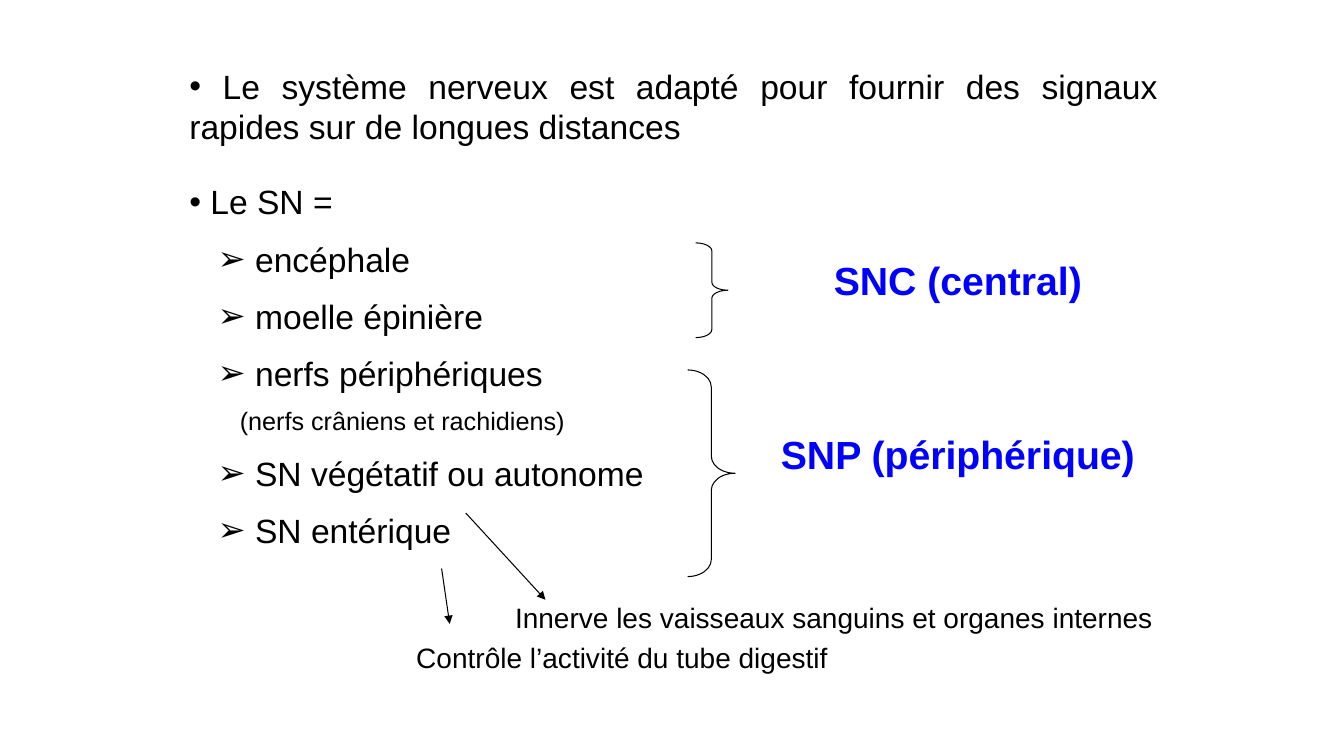
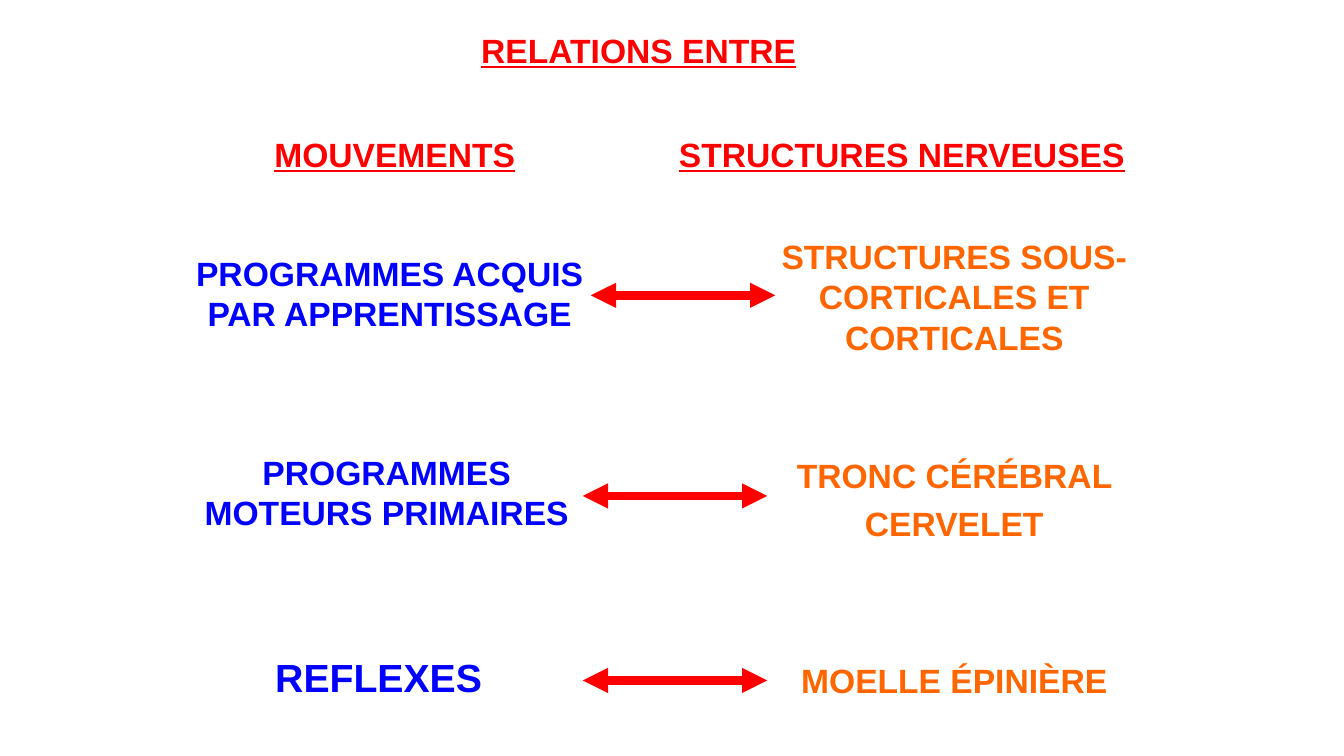
from lxml import etree
from pptx import Presentation
from pptx.dml.color import RGBColor
from pptx.enum.shapes import MSO_CONNECTOR as Connector, MSO_SHAPE as Shape
from pptx.enum.text import MSO_AUTO_SIZE as AutoSize, PP_ALIGN as Align
from pptx.oxml.ns import qn
from pptx.util import Inches, Pt

COLOURS = {
    "text": "000000",
    "accent": "0000FF",
    "heading": "FF0000",
    "structure": "FF6600",
}

# Text styles: font attributes, plus colour and alignment
STYLES = {
    "body": {"font": {"size": Pt(24)}, "colour": "text", "align": Align.JUSTIFY},
    "detail": {"font": {"size": Pt(18)}, "colour": "text", "align": Align.JUSTIFY},
    "note": {"font": {"size": Pt(20)}, "colour": "text", "align": Align.LEFT},
    "label": {"font": {"size": Pt(28), "bold": True}, "colour": "accent", "align": Align.CENTER},
    "movement": {"font": {"size": Pt(24), "bold": True}, "colour": "accent", "align": Align.CENTER},
    "structure": {"font": {"size": Pt(24), "bold": True}, "colour": "structure", "align": Align.CENTER},
    "heading": {"font": {"size": Pt(24), "bold": True, "underline": True},
                "colour": "heading", "align": Align.CENTER},
}


class Deck:
    font_name = "Arial"
    thin, thick = Pt(0.75), Pt(6)

    def __init__(self):
        self.presentation = Presentation()
        self.presentation.slide_width = Inches(13.33)
        self.presentation.slide_height = Inches(7.5)
        self.slide = None

    def new_slide(self):
        self.slide = self.presentation.slides.add_slide(self.presentation.slide_layouts[6])

    def text(self, box, *items, line_spacing=None):
        """Each item is (text, style) or (text, style, bullet, margin, indent)."""
        frame = self.slide.shapes.add_textbox(*map(Inches, box)).text_frame
        frame.word_wrap = True
        frame.auto_size = AutoSize.SHAPE_TO_FIT_TEXT
        for number, (words, style_name, *bullet) in enumerate(items):
            paragraph = frame.paragraphs[0] if number == 0 else frame.add_paragraph()
            style = STYLES[style_name]
            formats = {
                "alignment": style["align"],
                "line_spacing": line_spacing,
                "space_before": Pt(style["font"]["size"].pt / 2),
            }
            for name, value in formats.items():
                setattr(paragraph, name, value)
            run = paragraph.add_run()
            run.text = words
            for name, value in {"name": self.font_name, **style["font"]}.items():
                setattr(run.font, name, value)
            run.font.color.rgb = RGBColor.from_string(COLOURS[style["colour"]])
            if bullet:
                self.bullet(paragraph, *bullet)

    def bullet(self, paragraph, character, margin=0, indent=0):
        properties = paragraph._p.get_or_add_pPr()
        properties.set("marL", str(Inches(margin)))
        properties.set("indent", str(Inches(indent)))
        if character:
            etree.SubElement(properties, qn("a:buFont")).set("typeface", self.font_name)
            etree.SubElement(properties, qn("a:buChar")).set("char", character)

    def brace(self, box, curve):
        shape = self.slide.shapes.add_shape(Shape.RIGHT_BRACE, *map(Inches, box))
        shape.shadow.inherit = False
        shape.adjustments[0] = curve
        shape.fill.background()
        self.outline(shape.line, "text", self.thin)

    def arrow(self, start, end, colour, width, ends=("tailEnd",)):
        connector = self.slide.shapes.add_connector(
            Connector.STRAIGHT, *map(Inches, start + end))
        self.outline(connector.line, colour, width)
        line = connector.line._get_or_add_ln()
        for end_name in ends:
            etree.SubElement(line, qn(f"a:{end_name}")).set("type", "triangle")
        etree.SubElement(connector._element.spPr, qn("a:effectLst"))

    def outline(self, line, colour, width):
        line.color.rgb = RGBColor.from_string(COLOURS[colour])
        line.width = width


def build_nervous_system(deck):
    deck.new_slide()

    # Outline of the nervous system
    deck.text((1.78, 0.6, 9.8, 0.91),
              (" Le système nerveux est adapté pour fournir des signaux rapides "
               "sur de longues distances", "body", "•"))
    arrow_bullet = ("body", "➢", 0.5, -0.22)
    deck.text((1.78, 1.75, 9.8, 5.2),
              (" Le SN =", "body", "•"),
              (" encéphale", *arrow_bullet),
              (" moelle épinière", *arrow_bullet),
              (" nerfs périphériques", *arrow_bullet),
              ("(nerfs crâniens et rachidiens)", "detail", None, 0.5),
              (" SN végétatif ou autonome", *arrow_bullet),
              (" SN entérique", *arrow_bullet))

    # Central and peripheral groups
    deck.brace((6.9, 2.41, 0.32, 0.94), 0.25)
    deck.brace((6.82, 3.67, 0.47, 2.05), 0.36)
    for top, words in ((2.49, "SNC (central)"), (4.22, "SNP (périphérique)")):
        deck.text((7.53, top, 3.94, 0.57), (words, "label"))

    # Roles of the last two items
    roles = (
        ((4.62, 5.09), (5.41, 5.95), (5.01, 5.91),
         "Innerve les vaisseaux sanguins et organes internes"),
        ((4.38, 5.64), (4.46, 6.19), (4.03, 6.31),
         "Contrôle l’activité du tube digestif"),
    )
    for start, end, corner, words in roles:
        deck.arrow(start, end, "text", deck.thin)
        deck.text((*corner, 6.65, 0.43), (words, "note"))


def build_relations(deck):
    deck.new_slide()

    # Title and column headings
    for box, words in (
        ((4.25, 0.25, 4.17, 0.5), "RELATIONS ENTRE"),
        ((1.83, 1.28, 4.17, 0.5), "MOUVEMENTS"),
        ((6.58, 1.28, 4.73, 0.5), "STRUCTURES NERVEUSES"),
    ):
        deck.text(box, (words, "heading"))

    # Movement boxes, structure boxes and the arrows between them
    rows = (
        ((1.78, 2.46), 0.91, "PROGRAMMES ACQUIS PAR APPRENTISSAGE", "movement",
         2.29, 1.31, "STRUCTURES SOUS-CORTICALES ET CORTICALES", None, (5.86, 2.93)),
        ((1.75, 4.43), 0.91, "PROGRAMMES MOTEURS PRIMAIRES", "movement",
         4.38, 1.06, "TRONC CÉRÉBRAL CERVELET", 1.2, (5.78, 4.92)),
        ((1.67, 6.43), 0.57, "REFLEXES", "label",
         6.42, 0.54, "MOELLE ÉPINIÈRE", 1.2, (5.78, 6.75)),
    )
    for (corner, height, movement, style, structure_top, structure_height,
         structure, spacing, (left, middle)) in rows:
        deck.text((*corner, 4.17, height), (movement, style))
        deck.text((7.38, structure_top, 4.17, structure_height),
                  (structure, "structure"), line_spacing=spacing)
        deck.arrow((left, middle), (left + 1.83, middle), "heading", deck.thick,
                   ("headEnd", "tailEnd"))


def main():
    deck = Deck()
    build_nervous_system(deck)
    build_relations(deck)
    deck.presentation.save("out.pptx")


if __name__ == "__main__":
    main()
